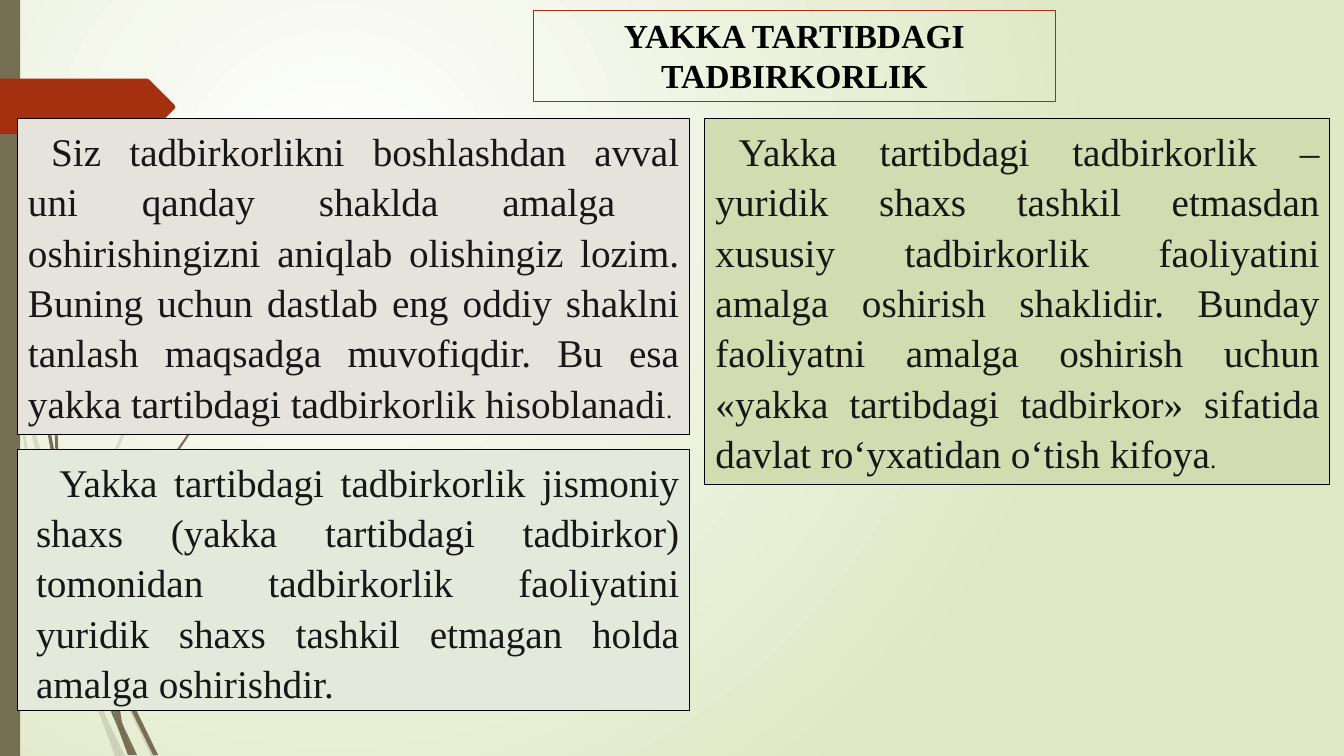
from dataclasses import dataclass

from lxml import etree
from pptx import Presentation
from pptx.dml.color import RGBColor
from pptx.enum.shapes import MSO_SHAPE as SHAPE
from pptx.enum.text import MSO_ANCHOR as ANCHOR, MSO_AUTO_SIZE as AUTO, PP_ALIGN as ALIGN
from pptx.oxml.ns import qn
from pptx.util import Pt

BLACK = RGBColor(0x00, 0x00, 0x00)
WHITE = RGBColor(0xFF, 0xFF, 0xFF)
INK = RGBColor(0x18, 0x17, 0x17)
OLIVE = RGBColor(0x76, 0x6F, 0x54)
RUST = RGBColor(0xA5, 0x30, 0x10)
PALE_GREEN = RGBColor(0xDF, 0xE8, 0xC4)
STONE = RGBColor(0xE5, 0xE3, 0xDB)
MOSS = RGBColor(0xD1, 0xDD, 0xB0)
MIST = RGBColor(0xE3, 0xE9, 0xDB)

FONT = "Times New Roman"
Points = list[tuple[float, float]]


@dataclass
class Run:
    text: str
    size: float
    color: RGBColor = INK
    bold: bool = False


@dataclass
class Box:
    left: float
    top: float
    width: float
    height: float
    fill: RGBColor | None
    line: RGBColor
    runs: list[Run]
    paragraph: dict
    margin: float = 0
    indent: float = 0


def body(space_after: float) -> dict:
    return {"alignment": ALIGN.JUSTIFY, "line_spacing": 1.07, "space_after": Pt(space_after)}


BOXES = [
    Box(380.9, 7.2, 373, 65.5, None, RUST,
        [Run("YAKKA TARTIBDAGI TADBIRKORLIK", 24, BLACK, True)],
        {"alignment": ALIGN.CENTER}),
    Box(12.2, 85, 480.2, 225.4, STONE, BLACK,
        [Run("Siz tadbirkorlikni boshlashdan avval uni qanday shaklda amalga  "
             "oshirishingizni aniqlab olishingiz lozim. Buning uchun dastlab eng oddiy "
             "shaklni tanlash maqsadga muvofiqdir. Bu esa yakka tartibdagi "
             "tadbirkorlik hisoblanadi", 28), Run(". ", 18)],
        body(0.2), 0.7, 16.6),
    Box(503.3, 85, 446.4, 261.4, MOSS, BLACK,
        [Run("Yakka tartibdagi tadbirkorlik – yuridik shaxs tashkil etmasdan xususiy "
             "tadbirkorlik faoliyatini amalga oshirish shaklidir. Bunday faoliyatni "
             "amalga oshirish uchun «yakka tartibdagi tadbirkor» sifatida davlat "
             "ro‘yxatidan o‘tish kifoya", 28), Run(".", 18)],
        body(9.9), 0.7, 16.6),
    Box(12.2, 321.1, 480.2, 186.5, MIST, BLACK,
        [Run("Yakka tartibdagi tadbirkorlik jismoniy shaxs (yakka tartibdagi tadbirkor) "
             "tomonidan tadbirkorlik faoliyatini yuridik shaxs tashkil etmagan holda "
             "amalga oshirishdir.", 28)],
        body(4.5), 6.5, 16.6),
]

PALE_STRANDS: list[Points] = [
    [(41.8, 375.8), (60.5, 431.3), (61.2, 421.9), (44.6, 374.4), (26, 311.9),
     (10.1, 248.4), (12.2, 270.7), (25.9, 323.6)],
    [(66.2, 437), (63.4, 429.1), (63.4, 439.2), (88.6, 499.7), (108, 540),
     (111.6, 540), (91.4, 498.2)],
    [(85.7, 540), (89.3, 540), (75.6, 511.9)],
    [(67, 491.8), (50.4, 445.7), (22.3, 337.7), (12.2, 270.7), (7.9, 252),
     (20.2, 338.4), (46.8, 447.1), (66.2, 499), (72.7, 514.1), (71.3, 509)],
    [(60.5, 431.3), (62.6, 465.1), (67, 491.8), (69.1, 498.2), (75.6, 511.9),
     (74.2, 508.3), (65.5, 465.1), (63.4, 439.2)],
    [(63.4, 420.5), (79.2, 332.6), (115.2, 251.3), (164.9, 176.4), (193, 142.6),
     (208.8, 126), (224.6, 110.9), (224.6, 110.2), (208.1, 126), (193, 141.8),
     (164.2, 175.7), (113.8, 250.6), (77, 331.9), (61.2, 420.5), (63.4, 429.1)],
    [(72.7, 514.1), (82.1, 540), (85.7, 540)],
    [(69.1, 498.2), (67, 491.8), (71.3, 509), (72.7, 514.1), (85.7, 540), (75.6, 511.9)],
]
DARK_STRANDS: list[Points] = [
    [(5, 79.2), (12.2, 167.8), (23.8, 255.6), (40.3, 343.4), (41, 346.3), (39.6, 329),
     (39.6, 326.2), (25.9, 255.6), (13.7, 167), (5.8, 78.5), (3.6, 34.6), (2.9, 0),
     (2.2, 0), (2.9, 34.6)],
    [(81.4, 467.3), (79.2, 461.5), (79.9, 472.3), (95, 509.8), (109.4, 539.3),
     (113, 539.3), (97.9, 508.3)],
    [(79.2, 497.5), (70.6, 473), (51.8, 400.3), (46.1, 363.6), (41, 343.4), (49, 401),
     (67, 474.5), (79.9, 509.8), (84.2, 519.8), (83.5, 516.2)],
    [(43.2, 339.8), (41.8, 326.2), (38.9, 251.3), (41.8, 176.4), (45.4, 139),
     (50.4, 101.5), (44.6, 139), (40.3, 176.4), (37.4, 251.3), (39.6, 323.3)],
    [(95.8, 539.3), (97.9, 539.3), (87.8, 517.7)],
    [(79.9, 455.8), (90, 397.4), (113.8, 342.7), (147.6, 292.3), (166.3, 269.3),
     (176.4, 258.5), (187.9, 247.7), (187.2, 247.7), (176.4, 257.8), (166.3, 268.6),
     (146.9, 291.6), (112.3, 341.3), (87.8, 396.7), (76.3, 454.3), (79.2, 461.5)],
    [(84.2, 519.8), (91.4, 539.3), (94.3, 539.3)],
    [(76.3, 464.4), (79.2, 497.5), (83.5, 508.3), (87.8, 517.7), (87.1, 515.5),
     (79.9, 472.3), (78.5, 468.7)],
    [(83.5, 508.3), (79.2, 497.5), (83.5, 516.2), (84.2, 519.8), (93.6, 539.3),
     (95.8, 539.3), (87.8, 517.7)],
]
RIBBON: Points = [(0, 56.2), (105.1, 56.2), (106.6, 56.9), (124.6, 74.9), (125.3, 76.3),
                  (124.6, 77.8), (106.6, 95.8), (105.1, 96.5), (0, 95.8)]


def paint_background(slide) -> None:
    """Radial gradient centred in the upper left quarter."""
    fill = slide.background.fill
    fill.gradient()
    for stop, color, position in zip(fill.gradient_stops, (WHITE, PALE_GREEN), (0, 1)):
        stop.color.rgb = color
        stop.position = position
    grad = slide.background._cSld.find(".//" + qn("a:gradFill"))
    linear = grad.find(qn("a:lin"))
    radial = etree.Element(qn("a:path"), path="circle")
    etree.SubElement(radial, qn("a:fillToRect"), l="50000", t="50000", r="100000", b="100000")
    grad.replace(linear, radial)


def style(sp, fill: RGBColor | None, line: RGBColor | None = None) -> None:
    sp.shadow.inherit = False
    if fill is None:
        sp.fill.background()
    else:
        sp.fill.solid()
        sp.fill.fore_color.rgb = fill
    if line is None:
        sp.line.fill.background()
    else:
        sp.line.color.rgb = line
        sp.line.width = Pt(0.75)


def add_outline(shapes, points: Points, color: RGBColor, opacity: int = 100) -> None:
    start, *rest = [(Pt(x), Pt(y)) for x, y in points]
    builder = shapes.build_freeform(*start)
    builder.add_line_segments(rest, close=True)
    sp = builder.convert_to_shape()
    style(sp, color)
    if opacity < 100:
        clr = sp._element.spPr.find(qn("a:solidFill"))[0]
        etree.SubElement(clr, qn("a:alpha"), val=str(opacity * 1000))


def add_box(shapes, box: Box) -> None:
    sp = shapes.add_shape(SHAPE.RECTANGLE, Pt(box.left), Pt(box.top),
                          Pt(box.width), Pt(box.height))
    style(sp, box.fill, box.line)
    tf = sp.text_frame
    frame = {"word_wrap": True, "auto_size": AUTO.SHAPE_TO_FIT_TEXT,
             "vertical_anchor": ANCHOR.TOP}
    for name, value in frame.items():
        setattr(tf, name, value)
    p = tf.paragraphs[0]
    for name, value in box.paragraph.items():
        setattr(p, name, value)
    pPr = p._p.get_or_add_pPr()
    pPr.set("marL", str(Pt(box.margin)))
    pPr.set("indent", str(Pt(box.indent)))
    for run in box.runs:
        r = p.add_run()
        r.text = run.text
        r.font.color.rgb = run.color
        for name, value in {"name": FONT, "size": Pt(run.size), "bold": run.bold}.items():
            setattr(r.font, name, value)


def main() -> None:
    prs = Presentation()
    prs.slide_width, prs.slide_height = Pt(960), Pt(540)
    slide = prs.slides.add_slide(prs.slide_layouts[6])
    shapes = slide.shapes
    paint_background(slide)
    for strand in PALE_STRANDS:
        add_outline(shapes, strand, OLIVE, opacity=20)
    for strand in DARK_STRANDS:
        add_outline(shapes, strand, OLIVE)
    side_bar = shapes.add_shape(SHAPE.RECTANGLE, 0, 0, Pt(14.4), prs.slide_height)
    style(side_bar, OLIVE)
    add_outline(shapes, RIBBON, RUST)
    for box in BOXES:
        add_box(shapes, box)
    prs.save("out.pptx")


if __name__ == "__main__":
    main()
